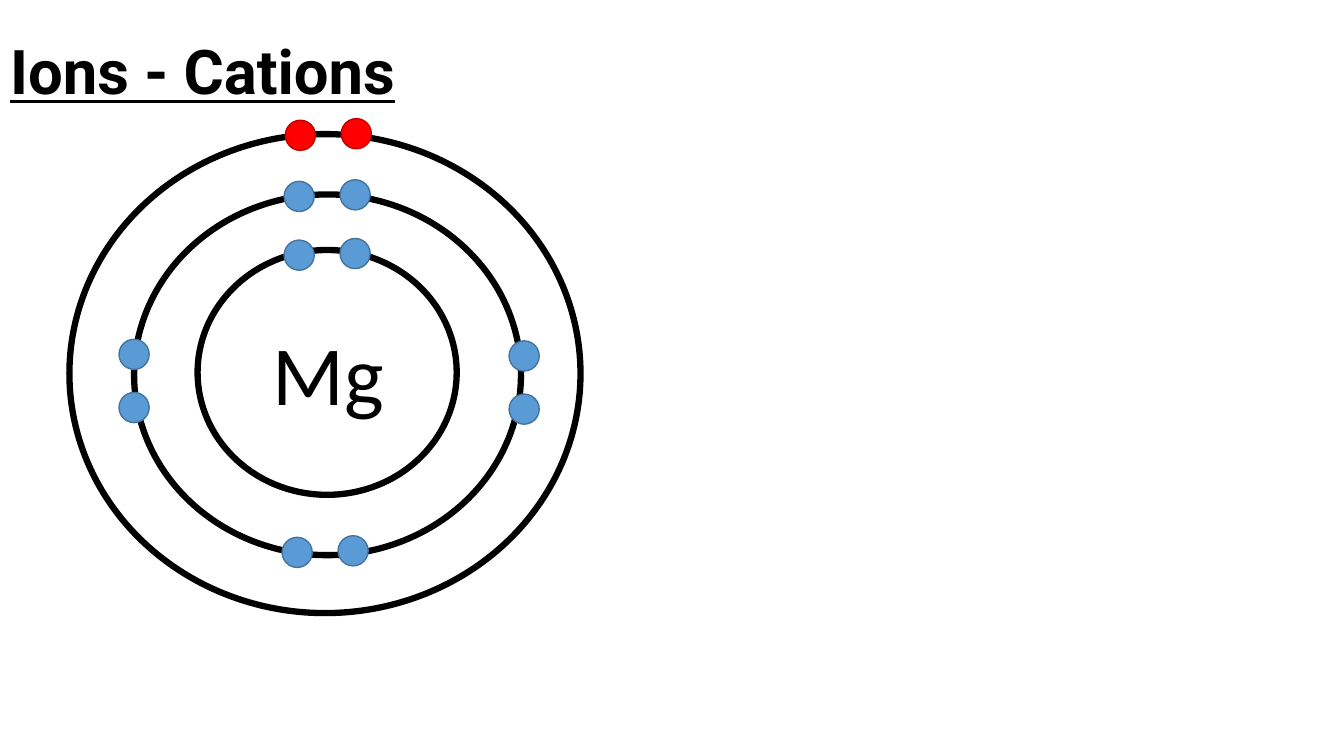
"""Draw the electron shells of a magnesium atom, with its outer electrons in red."""
from dataclasses import dataclass

from pptx import Presentation
from pptx.dml.color import RGBColor
from pptx.enum.shapes import MSO_SHAPE
from pptx.enum.text import MSO_ANCHOR, MSO_AUTO_SIZE, PP_ALIGN
from pptx.slide import Slide
from pptx.text.text import TextFrame
from pptx.util import Cm, Pt

COLORS = {"black": "000000", "white": "FFFFFF", "blue": "5B9BD5",
          "blue_edge": "43739E", "red": "FF0000", "red_edge": "C00000"}
ELECTRON_SIZE = 0.76
TITLE_FONT = {"name": "Roboto", "size": Pt(44), "bold": True, "underline": True}
SYMBOL_FONT = {"name": "Calibri", "size": Pt(60)}


@dataclass(frozen=True)
class Shell:
    left: float
    top: float
    width: float
    height: float


@dataclass(frozen=True)
class ElectronPair:
    left: float
    top: float
    dx: float = 1.41
    dy: float = -0.04
    color: str = "blue"


SHELLS = [Shell(1.75, 3.38, 12.88, 12.07),
          Shell(3.38, 4.9, 9.75, 9.09),
          Shell(4.98, 6.3, 6.53, 6.17)]
PAIRS = [ElectronPair(7.16, 6.05),
         ElectronPair(7.11, 13.54),
         ElectronPair(7.16, 4.57),
         ElectronPair(12.83, 8.59, 0, 1.34),
         ElectronPair(3.0, 8.55, 0, 1.34),
         ElectronPair(7.19, 3.03, color="red")]


def add_oval(s: Slide, box: Shell, fill: str, line: str, weight: float) -> None:
    sp = s.shapes.add_shape(MSO_SHAPE.OVAL, Cm(box.left), Cm(box.top),
                            Cm(box.width), Cm(box.height))
    sp.shadow.inherit = False
    sp.fill.solid()
    sp.fill.fore_color.rgb = RGBColor.from_string(COLORS[fill])
    sp.line.color.rgb = RGBColor.from_string(COLORS[line])
    sp.line.width = Pt(weight)


def add_pair(s: Slide, pair: ElectronPair) -> None:
    for i in range(2):
        box = Shell(pair.left + i * pair.dx, pair.top + i * pair.dy,
                    ELECTRON_SIZE, ELECTRON_SIZE)
        add_oval(s, box, pair.color, f"{pair.color}_edge", 1)


def write(tf: TextFrame, text: str, font: dict) -> None:
    tf.word_wrap = True
    p = tf.paragraphs[0]
    p.alignment = PP_ALIGN.LEFT
    r = p.add_run()
    r.text = text
    for name, value in font.items():
        setattr(r.font, name, value)
    r.font.color.rgb = RGBColor.from_string(COLORS["black"])


def add_title(s: Slide, text: str) -> None:
    title = s.shapes.title
    title.left, title.top, title.width, title.height = Cm(0), Cm(0.05), Cm(33.87), Cm(3.68)
    tf = title.text_frame
    write(tf, text, TITLE_FONT)
    tf.auto_size = MSO_AUTO_SIZE.NONE
    tf.vertical_anchor = MSO_ANCHOR.MIDDLE
    tf.paragraphs[0].line_spacing = 0.9


def main() -> None:
    prs = Presentation()
    prs.slide_width, prs.slide_height = Cm(33.87), Cm(19.05)
    s = prs.slides.add_slide(prs.slide_layouts[5])
    add_title(s, "Ions - Cations")
    for shell in SHELLS:
        add_oval(s, shell, "white", "black", 4.5)
    symbol = s.shapes.add_textbox(Cm(6.63), Cm(7.98), Cm(5.16), Cm(2.82))
    write(symbol.text_frame, "Mg", SYMBOL_FONT)
    for pair in PAIRS:
        add_pair(s, pair)
    prs.save("out.pptx")


if __name__ == "__main__":
    main()
